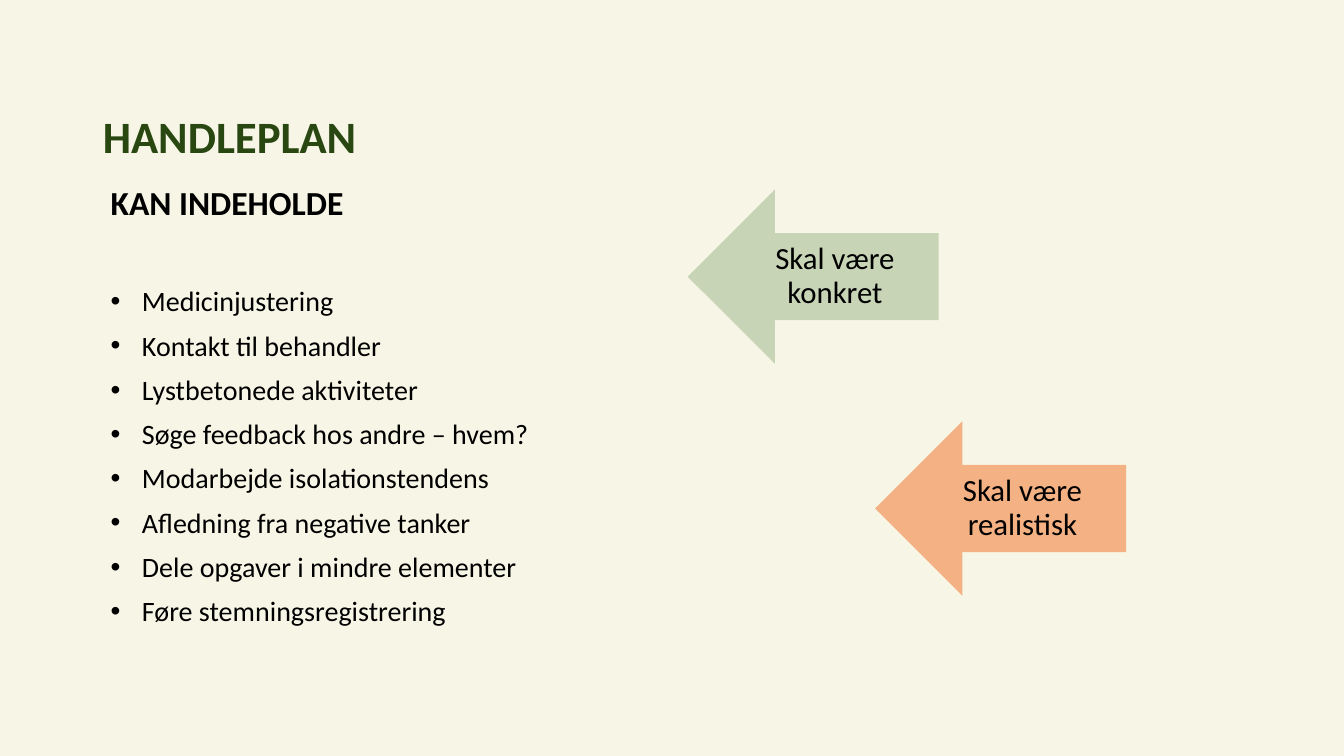
"""Build the Handleplan slide."""
from dataclasses import dataclass

from lxml.etree import SubElement
from pptx import Presentation
from pptx.dml.color import RGBColor as Rgb
from pptx.enum.shapes import MSO_SHAPE as Shape
from pptx.enum.text import MSO_ANCHOR as Anchor, MSO_AUTO_SIZE as Fit, PP_ALIGN as Align
from pptx.oxml.ns import qn
from pptx.util import Inches, Pt


@dataclass(frozen=True)
class Theme:
    font: str = "Calibri"
    back: str = "F7F6E6"
    ink: str = "000000"
    title: str = "294711"
    green: str = "C7D5B6"
    orange: str = "F4B183"
    title_size: int = 32
    head_size: int = 24
    item_size: int = 20
    arrow_size: int = 22
    gap: float = 10
    list_gap: float = 46.4


@dataclass(frozen=True)
class Arrow:
    text: str
    left: float
    top: float
    fill: str


THEME = Theme()
ITEMS = (
    "Medicinjustering",
    "Kontakt til behandler",
    "Lystbetonede aktiviteter",
    "Søge feedback hos andre – hvem?",
    "Modarbejde isolationstendens",
    "Afledning fra negative tanker",
    "Dele opgaver i mindre elementer",
    "Føre stemningsregistrering",
)
ARROWS = (
    Arrow("Skal være realistisk", 8.68, 4.18, THEME.orange),
    Arrow("Skal være konkret", 6.82, 1.88, THEME.green),
)


def style(para, size: int, color: str = THEME.ink, bold: bool = False,
          align: Align = Align.LEFT) -> None:
    para.alignment = align
    para.line_spacing = 0.9
    for run in para.runs:
        run.font.name = THEME.font
        run.font.size = Pt(size)
        run.font.bold = bold
        run.font.color.rgb = Rgb.from_string(color)


def add_bullet(para) -> None:
    props = para._p.get_or_add_pPr()
    indent = Inches(0.31)
    props.set("marL", str(indent))
    props.set("indent", str(-indent))
    SubElement(props, qn("a:buFont")).set("typeface", "Arial")
    SubElement(props, qn("a:buChar")).set("char", "•")


def set_title(slide) -> None:
    title = slide.shapes.title
    title.left, title.top = Inches(0.92), Inches(0.96)
    title.width, title.height = Inches(11.5), Inches(0.84)
    frame = title.text_frame
    frame.text = "HANDLEPLAN"
    frame.auto_size = Fit.NONE
    frame.vertical_anchor = Anchor.MIDDLE
    style(frame.paragraphs[0], THEME.title_size, THEME.title, True)


def add_list(slide) -> None:
    box = slide.shapes.add_textbox(Inches(1), Inches(1.8), Inches(5.67), Inches(5.42))
    frame = box.text_frame
    frame.word_wrap = True
    frame.text = "KAN INDEHOLDE"
    style(frame.paragraphs[0], THEME.head_size, bold=True)
    for index, item in enumerate(ITEMS):
        para = frame.add_paragraph()
        para.text = item
        add_bullet(para)
        para.space_before = Pt(THEME.gap if index else THEME.list_gap)
        style(para, THEME.item_size)


def add_arrow(slide, arrow: Arrow) -> None:
    shape = slide.shapes.add_shape(Shape.LEFT_ARROW, Inches(arrow.left), Inches(arrow.top),
                                   Inches(2.49), Inches(1.73))
    shape.shadow.inherit = False
    shape.fill.solid()
    shape.fill.fore_color.rgb = Rgb.from_string(arrow.fill)
    shape.line.fill.background()
    frame = shape.text_frame
    frame.margin_left = frame.margin_right = Inches(0.09)
    frame.margin_top = frame.margin_bottom = Inches(0.09)
    frame.word_wrap = True
    frame.vertical_anchor = Anchor.MIDDLE
    frame.text = arrow.text
    style(frame.paragraphs[0], THEME.arrow_size, align=Align.CENTER)


def main() -> None:
    deck = Presentation()
    deck.slide_width, deck.slide_height = Inches(13.33), Inches(7.5)
    slide = deck.slides.add_slide(deck.slide_layouts.get_by_name("Title Only"))
    back = slide.background.fill
    back.solid()
    back.fore_color.rgb = Rgb.from_string(THEME.back)
    set_title(slide)
    add_list(slide)
    for arrow in ARROWS:
        add_arrow(slide, arrow)
    deck.save("out.pptx")


if __name__ == "__main__":
    main()
